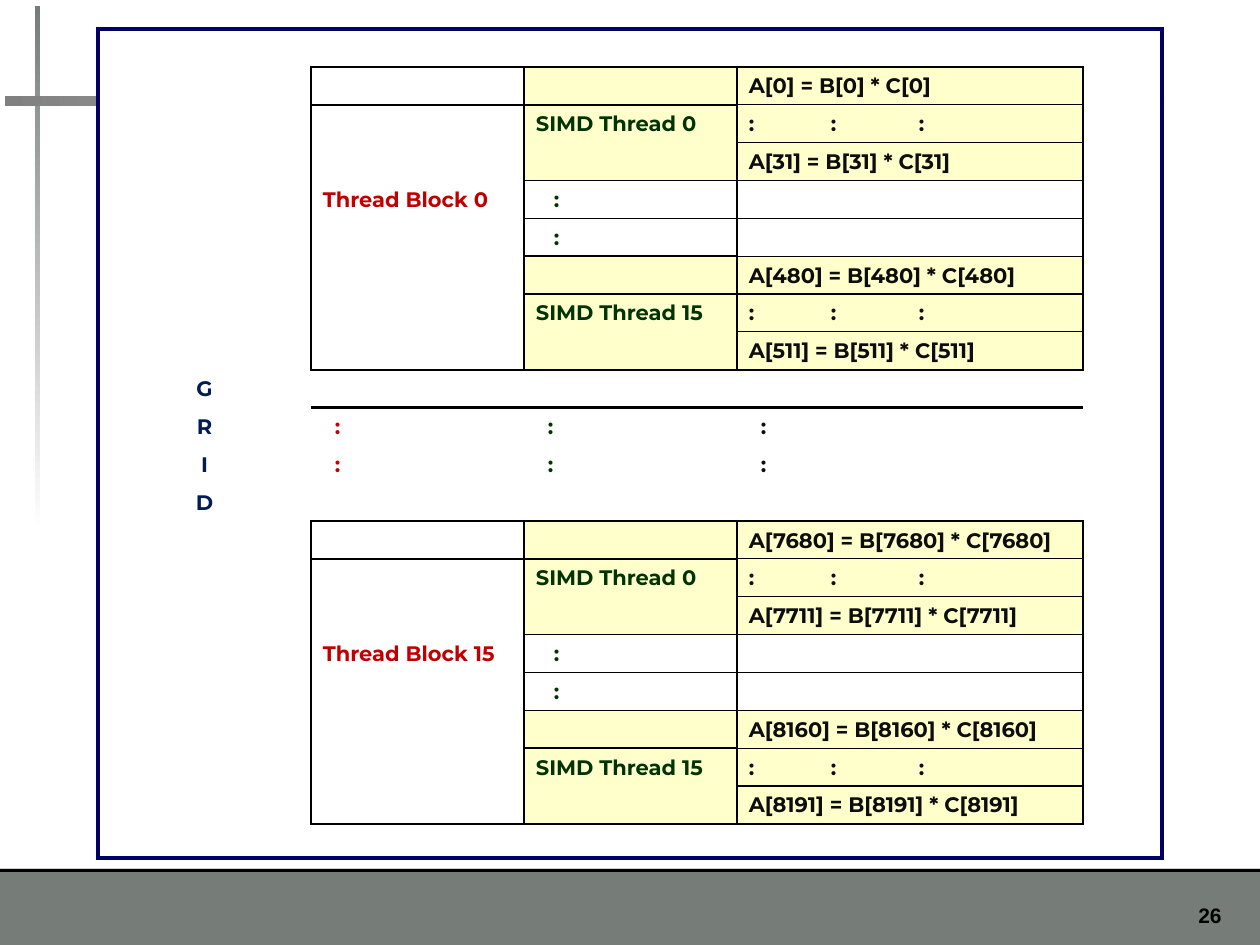
"""Build a slide that maps a vector multiply onto a grid of thread blocks."""
import dataclasses

import lxml.etree
import pptx
import pptx.dml.color
import pptx.enum.shapes
import pptx.enum.text
import pptx.oxml.ns
import pptx.util

SCALE = 914400 / 126
ROWS, COLS = 22, (213, 213, 213, 346, 79)
INSET = 12
SIDES = {"L": (0, -1, "R"), "R": (0, 1, "L"), "T": (-1, 0, "B"), "B": (1, 0, "T")}
ALIGN = pptx.enum.text.PP_ALIGN


@dataclasses.dataclass(frozen=True)
class Theme:
    body: str = "Montserrat"
    foot: str = "Arial"
    size: int = 12
    white: str = "FFFFFF"
    black: str = "000000"
    gray: str = "767D79"
    ash: str = "808080"
    navy: str = "000066"
    cream: str = "FFFFCC"
    ink: str = "0D0D0D"
    green: str = "003300"
    red: str = "C00000"
    blue: str = "001C53"
    thick: float = 2.25
    block: float = 1.5
    thread: float = 1
    thin: float = 0.75


THEME = Theme()


def px(count):
    return round(count * SCALE)


def rgb(code):
    return pptx.dml.color.RGBColor.from_string(code)


def add(node, tag, **attrs):
    return lxml.etree.SubElement(node, pptx.oxml.ns.qn(tag), attrs)


def write(frame, text, color=THEME.ink, face=THEME.body, align=ALIGN.LEFT, tabs=()):
    para = frame.paragraphs[0]
    para.alignment = align
    if tabs:
        stops = add(para._p.get_or_add_pPr(), "a:tabLst")
        for stop in tabs:
            add(stops, "a:tab", pos=str(px(stop)), algn="l")
    if not text:
        add(para._p, "a:endParaRPr", sz=str(THEME.size * 100))
        return
    run = para.add_run()
    run.text = text
    run.font.name = face
    run.font.size = pptx.util.Pt(THEME.size)
    run.font.bold = True
    run.font.color.rgb = rgb(color)


def bar(slide, left, top, width, height, color, fade=None, angle=0):
    shape = slide.shapes.add_shape(
        pptx.enum.shapes.MSO_SHAPE.RECTANGLE, px(left), px(top), px(width), px(height))
    shape.shadow.inherit = False
    shape.line.fill.background()
    if fade:
        shape.fill.gradient()
        shape.fill.gradient_angle = angle
        for stop, code in zip(shape.fill.gradient_stops, (color, fade)):
            stop.color.rgb = rgb(code)
    else:
        shape.fill.solid()
        shape.fill.fore_color.rgb = rgb(color)


def box(edges, top, left, end, right, width, color=THEME.black):
    """Outline a range of cells, on both cells that share each side."""
    for row in range(top, end + 1):
        for col in range(left, right + 1):
            for side, (down, over, other) in SIDES.items():
                near = (row + down, col + over)
                if top <= near[0] <= end and left <= near[1] <= right:
                    continue
                edges[row, col, side] = (width, color)
                edges[(*near, other)] = (width, color)


def block(cells, edges, fills, top, index):
    first = index * 512
    cells[top + 3, 1] = (f"Thread Block {index}", {"color": THEME.red})
    for row in (top + 3, top + 4):
        cells[row, 2] = (":", {"color": THEME.green, "indent": 18})
    for start, thread in ((top, 0), (top + 5, 15)):
        low = first + thread * 32
        high = low + 31
        cells[start + 1, 2] = (f"SIMD Thread {thread}", {"color": THEME.green})
        cells[start, 3] = (f"A[{low}] = B[{low}] * C[{low}]", {})
        cells[start + 1, 3] = (":\t:\t:", {"tabs": (82, 170)})
        cells[start + 2, 3] = (f"A[{high}] = B[{high}] * C[{high}]", {})
        for row in range(start, start + 3):
            fills.update({(row, 2): THEME.cream, (row, 3): THEME.cream})
            box(edges, row, 3, row, 3, THEME.thin)
        box(edges, start, 2, start + 2, 2, THEME.thread)
    box(edges, top, 1, top + 7, 3, THEME.block)
    box(edges, top, 1, top + 7, 1, THEME.block)


def plan():
    cells, edges, fills = {}, {}, {}
    for top, index in ((1, 0), (13, 15)):
        block(cells, edges, fills, top, index)
    for row, mark in enumerate("GRID", 9):
        cells[row, 0] = (mark, {"color": THEME.blue, "align": ALIGN.CENTER})
    for row in (10, 11):
        for col, color in enumerate((THEME.red, THEME.green, THEME.ink), 1):
            cells[row, col] = (":", {"color": color, "indent": 12})
    box(edges, 0, 0, ROWS - 1, len(COLS) - 1, THEME.thick, THEME.navy)
    return cells, edges, fills


def style(cell, lines, fill):
    props = cell._tc.get_or_add_tcPr()
    for side in SIDES:
        if side in lines:
            width, color = lines[side]
            line = add(props, f"a:ln{side}", w=str(pptx.util.Pt(width)))
            add(add(line, "a:solidFill"), "a:srgbClr", val=color)
    cell.fill.solid()
    cell.fill.fore_color.rgb = rgb(fill)


def grid(slide):
    cells, edges, fills = plan()
    table = slide.shapes.add_table(
        ROWS, len(COLS), px(98), px(29), px(sum(COLS)), px(827)).table
    table.first_row = table.horz_banding = False
    look = table._tbl.tblPr.find(pptx.oxml.ns.qn("a:tableStyleId"))
    look.text = "{2D5ABB26-0587-4C30-8999-92F81FD0307C}"
    for col, width in enumerate(COLS):
        table.columns[col].width = px(width)
    for row in range(ROWS):
        table.rows[row].height = px(795) // 21 if row < ROWS - 1 else px(32)
        for col in range(len(COLS)):
            cell = table.cell(row, col)
            text, form = cells.get((row, col), ("", {}))
            form = dict(form)
            cell.margin_left = px(INSET + form.pop("indent", 0))
            cell.margin_right = px(INSET)
            cell.margin_top, cell.margin_bottom = px(5), px(4)
            cell.vertical_anchor = pptx.enum.text.MSO_ANCHOR.MIDDLE
            lines = {side: edges[row, col, side]
                     for side in SIDES if (row, col, side) in edges}
            style(cell, lines, fills.get((row, col), THEME.white))
            write(cell.text_frame, text, **form)


def label(slide, text, left, top, width, height, **form):
    frame = slide.shapes.add_textbox(
        px(left), px(top), px(width), px(height)).text_frame
    frame.word_wrap = True
    write(frame, text, **form)


def main():
    deck = pptx.Presentation()
    deck.slide_width, deck.slide_height = px(1260), px(945)
    slide = deck.slides.add_slide(deck.slide_layouts[6])
    bar(slide, 0, 869, 1260, 76, THEME.gray)
    bar(slide, 0, 869, 1260, 3, THEME.black)
    label(slide, "26", 1155, 896, 79, 38,
          color=THEME.black, face=THEME.foot, align=ALIGN.RIGHT)
    bar(slide, 35, 6, 5, 525, THEME.gray, fade=THEME.white, angle=270)
    bar(slide, 5, 96, 1181, 10, THEME.ash, fade=THEME.white)
    grid(slide)
    deck.save("out.pptx")


if __name__ == "__main__":
    main()
